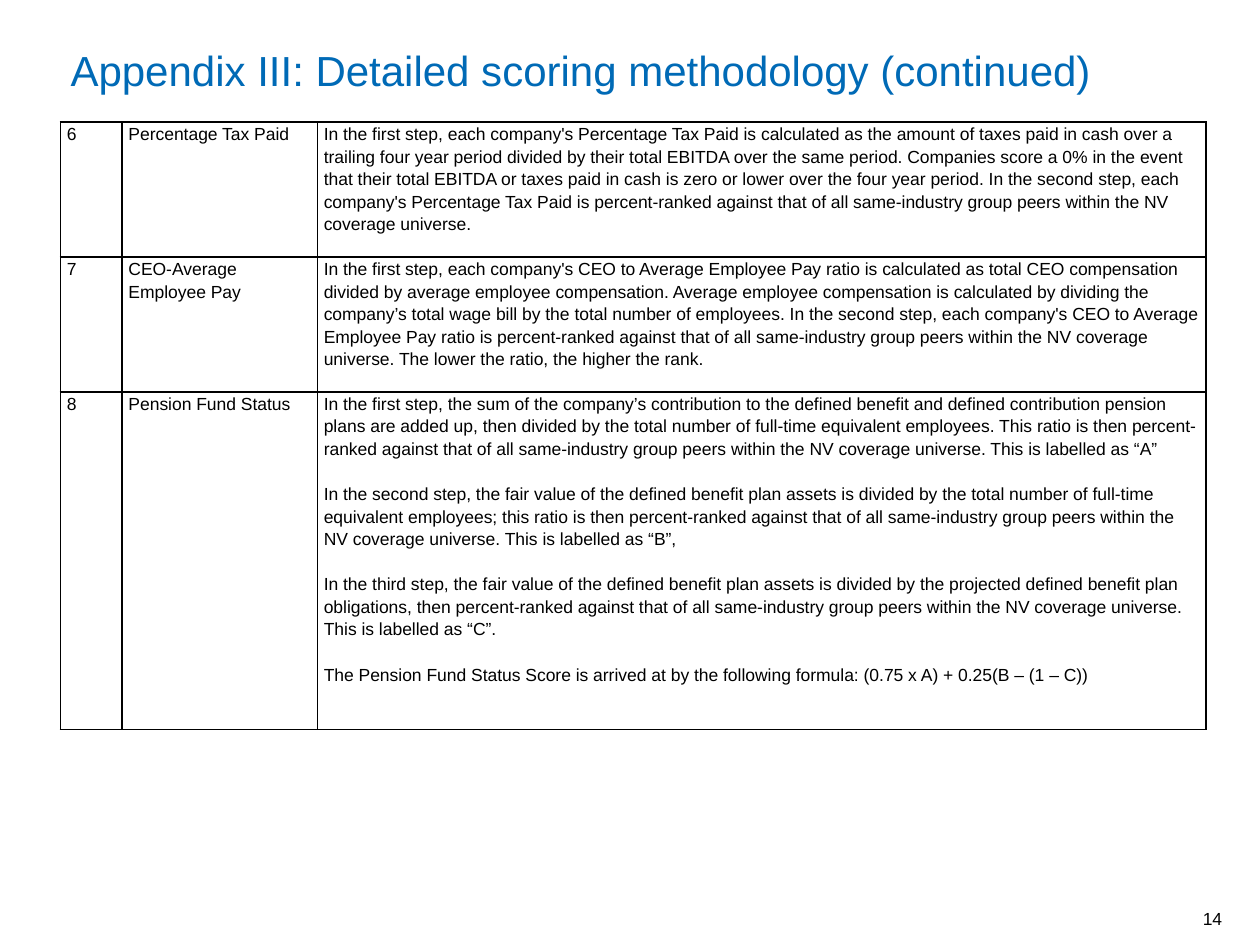
from lxml import etree
from pptx import Presentation
from pptx.dml.color import RGBColor
from pptx.enum.text import MSO_ANCHOR, PP_ALIGN
from pptx.oxml.ns import qn
from pptx.util import Inches, Pt

TOP, BOTTOM = MSO_ANCHOR.TOP, MSO_ANCHOR.BOTTOM
LEFT, RIGHT = PP_ALIGN.LEFT, PP_ALIGN.RIGHT
TITLE_ONLY = 5
FONT = "Arial"
COLORS = {"title": "006AB6", "text": "000000", "border": "000000"}
BODY_SIZE = 10
LINE_SPACING = 1.15
STEP_GAP = 13

COLUMN_WIDTHS = [0.49, 1.55, 7.05]
ROW_HEIGHTS = [1.07, 1.07, 2.68]

# Number, indicator, and the paragraphs of its method
INDICATORS = [
    ("6", "Percentage Tax Paid", [
        "In the first step, each company's Percentage Tax Paid is calculated as the amount of "
        "taxes paid in cash over a trailing four year period divided by their total EBITDA over "
        "the same period. Companies score a 0% in the event that their total EBITDA or taxes paid "
        "in cash is zero or lower over the four year period. In the second step, each company's "
        "Percentage Tax Paid is percent‐ranked against that of all same‐industry group peers "
        "within the NV coverage universe.",
    ]),
    ("7", "CEO-Average Employee Pay", [
        "In the first step, each company's CEO to Average Employee Pay ratio is calculated as "
        "total CEO compensation divided by average employee compensation. Average employee "
        "compensation is calculated by dividing the company’s total wage bill by the total number "
        "of employees. In the second step, each company's CEO to Average Employee Pay ratio is "
        "percent‐ranked against that of all same‐industry group peers within the NV coverage "
        "universe. The lower the ratio, the higher the rank.",
    ]),
    ("8", "Pension Fund Status", [
        "In the first step, the sum of the company’s contribution to the defined benefit and "
        "defined contribution pension plans are added up, then divided by the total number of "
        "full-time equivalent employees. This ratio is then percent-ranked against that of all "
        "same-industry group peers within the NV coverage universe. This is labelled as “A”",
        "In the second step, the fair value of the defined benefit plan assets is divided by the "
        "total number of full-time equivalent employees; this ratio is then percent-ranked against "
        "that of all same-industry group peers within the NV coverage universe. This is labelled "
        "as “B”,",
        "In the third step, the fair value of the defined benefit plan assets is divided by the "
        "projected defined benefit plan obligations, then percent-ranked against that of all "
        "same-industry group peers within the NV coverage universe. This is labelled as “C”.",
        "The Pension Fund Status Score is arrived at by the following formula: "
        "(0.75 x A) + 0.25(B – (1 – C))",
    ]),
]


def add_run(paragraph, text, size, color):
    run = paragraph.add_run()
    run.text = text
    run.font.name = FONT
    run.font.size = Pt(size)
    run.font.color.rgb = RGBColor.from_string(COLORS[color])


def set_title(slide, text):
    title = slide.shapes.title
    title.left, title.top = Inches(0.46), Inches(0.25)
    title.width, title.height = Inches(8.6), Inches(0.81)
    frame = title.text_frame
    frame.word_wrap = True
    frame.vertical_anchor = TOP
    frame.margin_top = Inches(0.1)
    frame.paragraphs[0].alignment = LEFT
    add_run(frame.paragraphs[0], text, 24, "title")


def add_page_number(slide, text):
    box = slide.shapes.add_textbox(Inches(8.93), Inches(7.17), Inches(0.77), Inches(0.2))
    frame = box.text_frame
    frame.word_wrap = True
    frame.vertical_anchor = BOTTOM
    frame.margin_left = frame.margin_right = frame.margin_top = frame.margin_bottom = 0
    frame.paragraphs[0].alignment = RIGHT
    add_run(frame.paragraphs[0], text, BODY_SIZE, "text")


def set_borders(cell, width=1):
    properties = cell._tc.get_or_add_tcPr()
    for index, side in enumerate(("a:lnL", "a:lnR", "a:lnT", "a:lnB")):
        line = etree.Element(qn(side), w=str(Pt(width)))
        fill = etree.SubElement(line, qn("a:solidFill"))
        etree.SubElement(fill, qn("a:srgbClr"), val=COLORS["border"])
        properties.insert(index, line)


def fill_cell(cell, texts):
    cell.fill.background()
    cell.margin_left = cell.margin_right = Inches(0.05)
    cell.margin_top = cell.margin_bottom = 0
    set_borders(cell)
    frame = cell.text_frame
    for index, text in enumerate(texts):
        paragraph = frame.add_paragraph() if index else frame.paragraphs[0]
        paragraph.line_spacing = LINE_SPACING
        if index:
            paragraph.space_before = Pt(STEP_GAP)
        add_run(paragraph, text, BODY_SIZE, "text")


def add_indicator_table(slide):
    table = slide.shapes.add_table(
        len(ROW_HEIGHTS), len(COLUMN_WIDTHS), Inches(0.48), Inches(0.97),
        Inches(sum(COLUMN_WIDTHS)), Inches(sum(ROW_HEIGHTS))).table
    table.first_row = table.horz_banding = False
    for column, width in zip(table.columns, COLUMN_WIDTHS):
        column.width = Inches(width)
    for row, height, (number, name, method) in zip(table.rows, ROW_HEIGHTS, INDICATORS):
        row.height = Inches(height)
        for cell, texts in zip(row.cells, ([number], [name], method)):
            fill_cell(cell, texts)


def main():
    presentation = Presentation()
    presentation.slide_width, presentation.slide_height = Inches(10), Inches(7.5)
    slide = presentation.slides.add_slide(presentation.slide_layouts[TITLE_ONLY])
    set_title(slide, "Appendix III: Detailed scoring methodology (continued)")
    add_indicator_table(slide)
    add_page_number(slide, "14")
    presentation.save("out.pptx")


if __name__ == "__main__":
    main()
